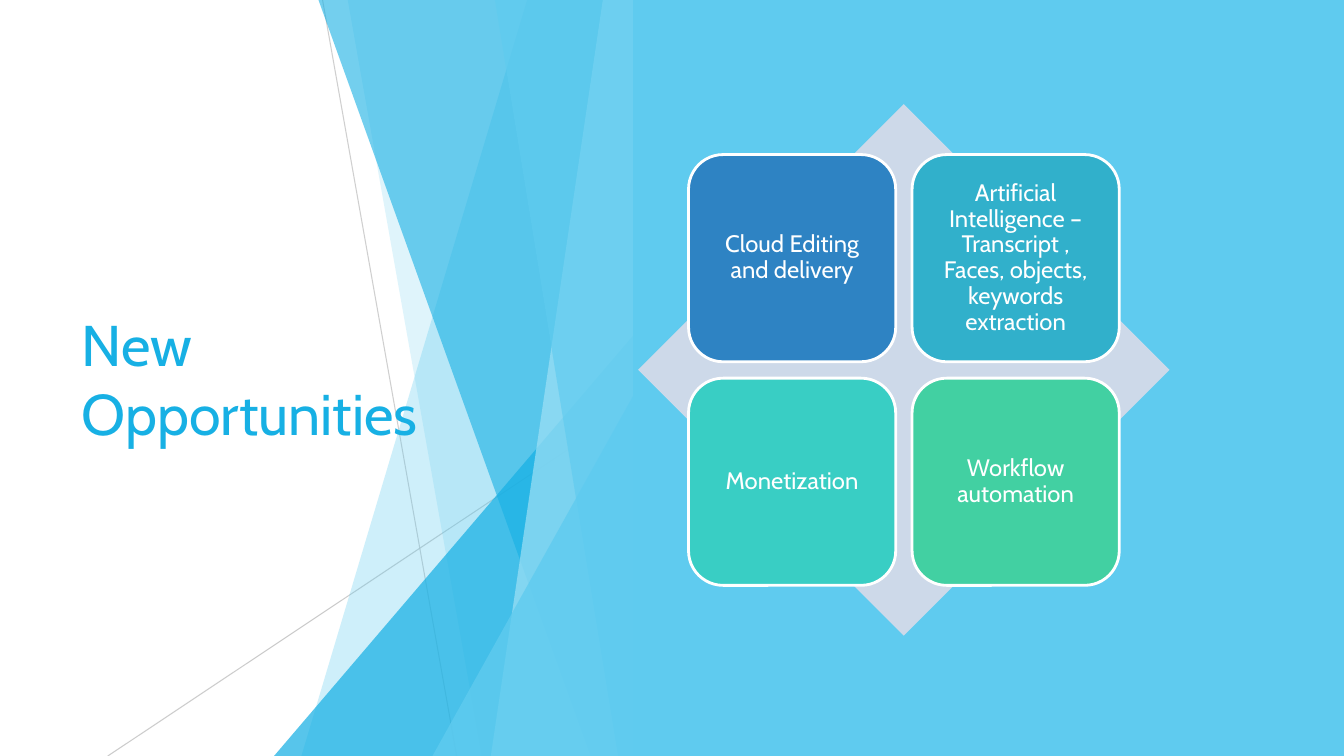
import pptx
import pptx.util
import pptx.dml.color
import pptx.enum.shapes
import pptx.enum.text
import lxml.etree

Pt = pptx.util.Pt
RGBColor = pptx.dml.color.RGBColor
Shape = pptx.enum.shapes.MSO_SHAPE
Anchor = pptx.enum.text.MSO_ANCHOR
Align = pptx.enum.text.PP_ALIGN
qn = pptx.oxml.ns.qn

WHITE = RGBColor(0xFF, 0xFF, 0xFF)
GRAY = RGBColor(0xBF, 0xBF, 0xBF)
SKY = RGBColor(0x5F, 0xCB, 0xEF)
AZURE = RGBColor(0x17, 0xB0, 0xE4)
PALE = RGBColor(0x9F, 0xE0, 0xF5)
MIST = RGBColor(0xCD, 0xD9, 0xE9)
BLUE = RGBColor(0x2E, 0x83, 0xC3)
TEAL = RGBColor(0x31, 0xB0, 0xCB)
TURQUOISE = RGBColor(0x39, 0xCE, 0xC4)
GREEN = RGBColor(0x42, 0xD0, 0xA2)

FONT = "Cabin"
WIDTH, HEIGHT = 960, 540
EDGE = 452.16


def paint(shape, color):
    shape.shadow.inherit = False
    shape.fill.solid()
    shape.fill.fore_color.rgb = color
    shape.line.fill.background()


def set_opacity(shape, percent):
    color = next(shape.element.spPr.iter(qn("a:srgbClr")))
    lxml.etree.SubElement(color, qn("a:alpha")).set("val", str(percent * 1000))


deck = pptx.Presentation()
deck.slide_width, deck.slide_height = Pt(WIDTH), Pt(HEIGHT)
page = deck.slides.add_slide(deck.slide_layouts[5])

rays = [
    (230.4, 0, 326.2, HEIGHT, 75),
    (EDGE, 290.2, 77, HEIGHT, 80),
]
for start_x, start_y, end_x, end_y, opacity in rays:
    ray = page.shapes.add_connector(
        pptx.enum.shapes.MSO_CONNECTOR.STRAIGHT,
        Pt(start_x), Pt(start_y), Pt(end_x), Pt(end_y))
    ray.line.color.rgb = GRAY
    ray.line.width = Pt(0.75)
    set_opacity(ray, opacity)
    lxml.etree.SubElement(ray.element.spPr, qn("a:effectLst"))

facets = [
    (376.6, 215.3, 0, SKY, 30),
    (248.4, 344.2, 0, SKY, 20),
    (EDGE, 195.8, 239.8, AZURE, 72),
    (227.5, 421.9, 0, AZURE, 60),
    (430.6, 350.6, 0, PALE, 70),
    (353.5, 441.4, 0, SKY, 65),
    (EDGE, 308.9, 283, SKY, 80),
]
for peak, foot, top, color, opacity in facets:
    if peak == EDGE:
        facet = page.shapes.add_shape(
            Shape.ISOSCELES_TRIANGLE, Pt(foot), Pt(top), Pt(EDGE - foot), Pt(HEIGHT - top))
        facet.adjustments[0] = 1
    else:
        outline = page.shapes.build_freeform(Pt(peak), Pt(top))
        outline.add_line_segments(
            [(Pt(EDGE), Pt(top)), (Pt(EDGE), Pt(HEIGHT)), (Pt(foot), Pt(HEIGHT))])
        facet = outline.convert_to_shape()
    paint(facet, color)
    set_opacity(facet, opacity)

title = page.shapes.title
page.shapes.element.append(title.element)
title.left, title.top, title.width, title.height = Pt(51.1), Pt(108.7), Pt(279.4), Pt(322.6)
title.text_frame.word_wrap = True
title.text_frame.auto_size = pptx.enum.text.MSO_AUTO_SIZE.NONE
title.text_frame.vertical_anchor = Anchor.MIDDLE
para = title.text_frame.paragraphs[0]
para.alignment = Align.LEFT
span = para.add_run()
span.text = "New Opportunities"
span.font.name, span.font.size, span.font.color.rgb = FONT, Pt(41), AZURE

panel = page.shapes.add_shape(Shape.RECTANGLE, Pt(EDGE), Pt(0), Pt(WIDTH - EDGE), Pt(HEIGHT))
paint(panel, SKY)
diamond = page.shapes.add_shape(Shape.DIAMOND, Pt(455.8), Pt(74.4), Pt(379.6), Pt(379.6))
paint(diamond, MIST)

CARD_LEFT, CARD_TOP, CARD_SIZE, CARD_STEP = 491.8, 110.4, 148, 159.7
cards = [
    ("Cloud Editing and delivery", BLUE),
    ("Artificial Intelligence – Transcript , Faces, objects, keywords extraction", TEAL),
    ("Monetization", TURQUOISE),
    ("Workflow automation", GREEN),
]
for index, (label, color) in enumerate(cards):
    row, column = divmod(index, 2)
    card = page.shapes.add_shape(
        Shape.ROUNDED_RECTANGLE,
        Pt(CARD_LEFT + column * CARD_STEP), Pt(CARD_TOP + row * CARD_STEP),
        Pt(CARD_SIZE), Pt(CARD_SIZE))
    paint(card, color)
    card.line.color.rgb = WHITE
    card.line.width = Pt(2)
    frame = card.text_frame
    frame.word_wrap = True
    frame.vertical_anchor = Anchor.MIDDLE
    frame.margin_left = frame.margin_right = frame.margin_top = frame.margin_bottom = Pt(5)
    para = frame.paragraphs[0]
    para.alignment = Align.CENTER
    para.line_spacing = 0.9
    span = para.add_run()
    span.text = label
    span.font.name, span.font.size, span.font.color.rgb = FONT, Pt(17), WHITE

deck.save("out.pptx")
